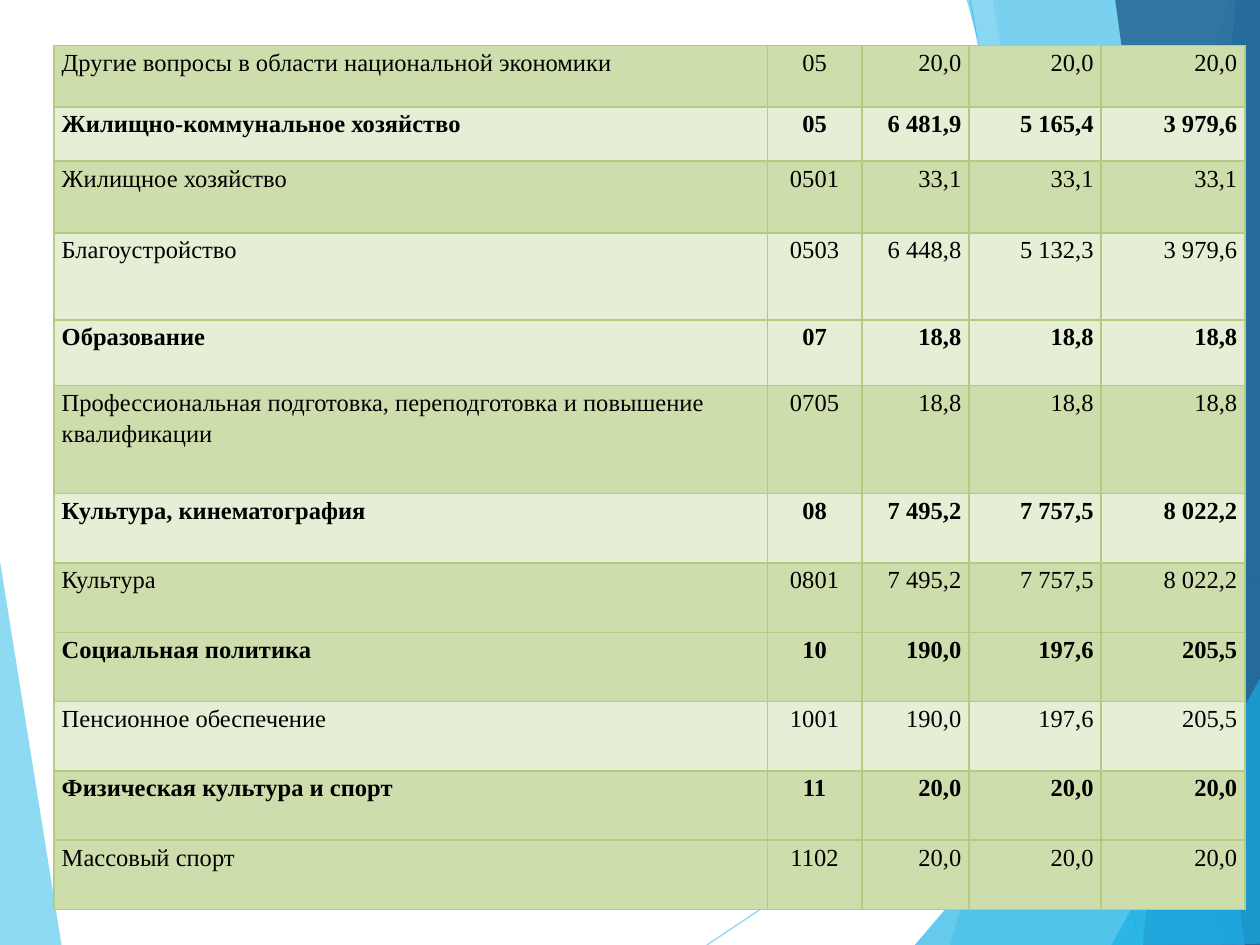
from pptx import Presentation
from pptx import util as u
from pptx.dml.color import RGBColor
from pptx.enum import shapes, text
from pptx.oxml.ns import qn
from lxml import etree

COLORS = {
    "sky": "5FCBEF", "cyan": "17B0E4", "blue": "2E83C3", "navy": "226292",
    "dark": "CDDDAC", "light": "E6EED5", "border": "B3CC82", "ink": "000000",
}

# Back to front: colour, opacity in percent, points; two points make a line
FACETS = [
    ("sky", 70, [(-0.01, 4.39), (0.49, 7.51), (-0.01, 7.5)]),
    ("sky", 70, [(5.61, 7.5), (10.01, 4.57)]),
    ("sky", 70, [(7.7, 0), (9.04, 7.5)]),
    ("sky", 36, [(9.75, 0), (7.54, 7.5), (10.02, 7.51), (10.01, 0.01)]),
    ("sky", 20, [(7.88, -0.01), (9.19, 7.5), (10.01, 7.5), (10.01, -0.01)]),
    ("cyan", 66, [(7.26, 7.5), (10, 4.29), (10.01, 7.5)]),
    ("cyan", 50, [(7.67, -0.01), (9.7, 7.5), (10.01, 7.49), (10.01, -0.01)]),
    ("blue", 70, [(9.81, -0.01), (9.07, 7.5), (10.01, 7.5), (10, -0.01)]),
    ("navy", 82, [(8.85, -0.01), (9.88, 7.5), (10.02, 7.5), (10, -0.01)]),
    ("cyan", 66, [(8.82, 7.5), (10.02, 5.35), (10.02, 7.49)]),
]

TABLE_LEFT, TABLE_TOP = 0.43, 0.36
COLUMN_WIDTHS = [5.66, 0.75, 0.85, 1.05, 1.14]
COLUMN_ALIGNS = [text.PP_ALIGN.LEFT, text.PP_ALIGN.CENTER] + [text.PP_ALIGN.RIGHT] * 3

# Height, fill, bold, cell texts
BUDGET = [
    (0.49, "dark", False, ["Другие вопросы в области национальной экономики", "05", "20,0", "20,0", "20,0"]),
    (0.43, "light", True, ["Жилищно-коммунальное хозяйство", "05", "6 481,9", "5 165,4", "3 979,6"]),
    (0.57, "dark", False, ["Жилищное хозяйство", "0501", "33,1", "33,1", "33,1"]),
    (0.69, "light", False, ["Благоустройство", "0503", "6 448,8", "5 132,3", "3 979,6"]),
    (0.52, "light", True, ["Образование", "07", "18,8", "18,8", "18,8"]),
    (0.86, "dark", False, ["Профессиональная подготовка, переподготовка и повышение квалификации",
                           "0705", "18,8", "18,8", "18,8"]),
    (0.55, "light", True, ["Культура, кинематография", "08", "7 495,2", "7 757,5", "8 022,2"]),
    (0.55, "dark", False, ["Культура", "0801", "7 495,2", "7 757,5", "8 022,2"]),
    (0.55, "dark", True, ["Социальная политика", "10", "190,0", "197,6", "205,5"]),
    (0.55, "light", False, ["Пенсионное обеспечение", "1001", "190,0", "197,6", "205,5"]),
    (0.55, "dark", True, ["Физическая культура и спорт", "11", "20,0", "20,0", "20,0"]),
    (0.55, "dark", False, ["Массовый спорт", "1102", "20,0", "20,0", "20,0"]),
]


def color(name):
    return RGBColor.from_string(COLORS[name])


def set_opacity(shape, percent):
    for tint in shape.element.iter(qn("a:srgbClr")):
        etree.SubElement(tint, qn("a:alpha"), val=str(percent * 1000))


def add_facet(page, name, opacity, points):
    points = [(u.Inches(x), u.Inches(y)) for x, y in points]
    if len(points) == 2:
        shape = page.shapes.add_connector(shapes.MSO_CONNECTOR.STRAIGHT, *points[0], *points[1])
        shape.line.color.rgb = color(name)
        shape.line.width = u.Pt(0.75)
        etree.SubElement(shape.element.spPr, qn("a:effectLst"))
    else:
        outline = page.shapes.build_freeform(*points[0])
        outline.add_line_segments(points[1:], close=True)
        shape = outline.convert_to_shape()
        shape.fill.solid()
        shape.fill.fore_color.rgb = color(name)
        shape.line.fill.background()
        shape.shadow.inherit = False
    set_opacity(shape, opacity)


def add_borders(cell):
    properties = cell._tc.get_or_add_tcPr()
    for index, side in enumerate(("lnL", "lnR", "lnT", "lnB")):
        line = etree.Element(qn("a:" + side), w=str(u.Pt(1)))
        fill = etree.SubElement(line, qn("a:solidFill"))
        etree.SubElement(fill, qn("a:srgbClr"), val=COLORS["border"])
        properties.insert(index, line)


def fill_cell(cell, words, align, fill, bold):
    cell.fill.solid()
    cell.fill.fore_color.rgb = color(fill)
    cell.margin_left = cell.margin_right = u.Inches(0.06)
    cell.margin_top = cell.margin_bottom = 0
    cell.text = words
    para = cell.text_frame.paragraphs[0]
    para.alignment = align
    para.line_spacing = 1.15
    para.font.name = "Times New Roman"
    para.font.size = u.Pt(14)
    para.font.bold = bold
    para.font.color.rgb = color("ink")
    add_borders(cell)


def add_budget(page):
    size = sum(COLUMN_WIDTHS), sum(row[0] for row in BUDGET)
    frame = page.shapes.add_table(len(BUDGET), len(COLUMN_WIDTHS),
                                  *map(u.Inches, (TABLE_LEFT, TABLE_TOP, *size)))
    table = frame.table
    table.first_row = table.horz_banding = False
    for column, width in zip(table.columns, COLUMN_WIDTHS):
        column.width = u.Inches(width)
    for row, (height, fill, bold, texts) in zip(table.rows, BUDGET):
        row.height = u.Inches(height)
        for cell, words, align in zip(row.cells, texts, COLUMN_ALIGNS):
            fill_cell(cell, words, align, fill, bold)


def main():
    deck = Presentation()
    deck.slide_width, deck.slide_height = u.Inches(10), u.Inches(7.5)
    page = deck.slides.add_slide(deck.slide_layouts[6])
    for facet in FACETS:
        add_facet(page, *facet)
    add_budget(page)
    deck.save("out.pptx")


if __name__ == "__main__":
    main()
